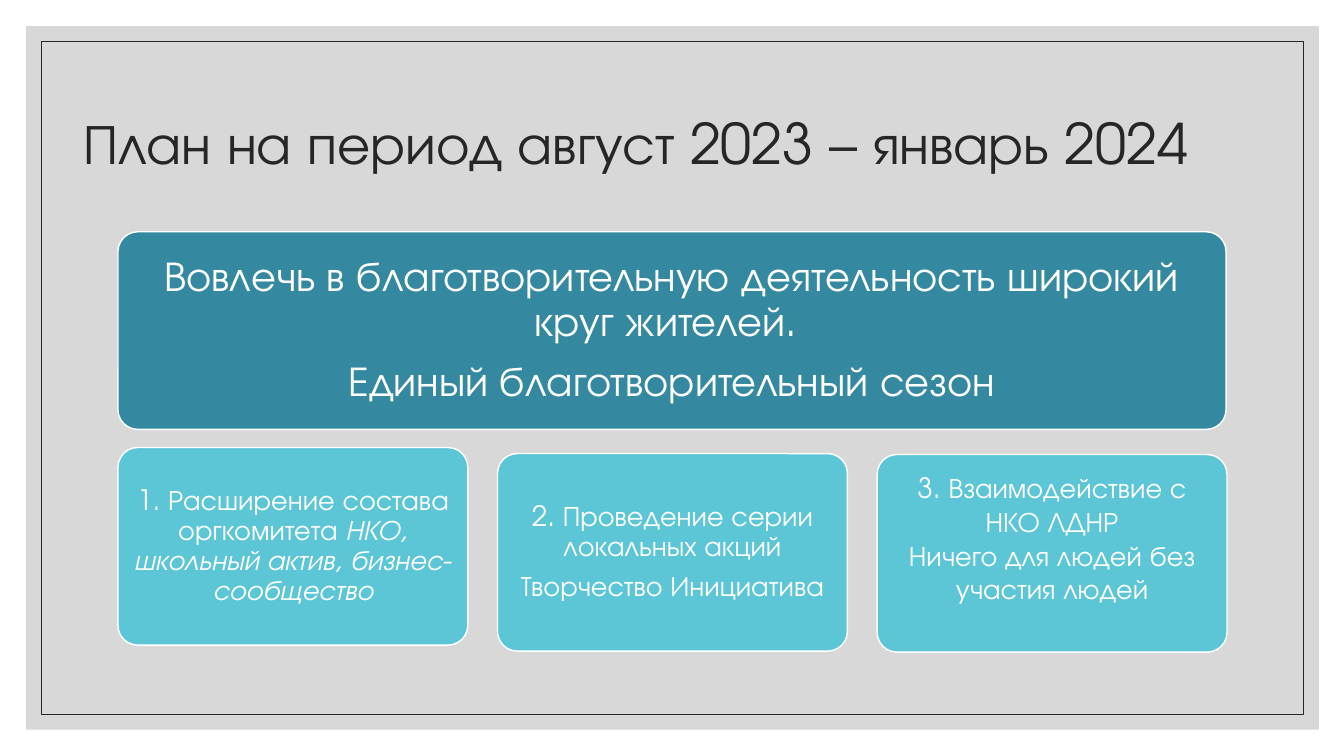
from dataclasses import dataclass

from lxml import etree
from pptx import Presentation
from pptx.dml.color import RGBColor
from pptx.enum.shapes import MSO_SHAPE
from pptx.enum.text import MSO_ANCHOR, PP_ALIGN
from pptx.oxml.ns import qn
from pptx.shapes.autoshape import Shape
from pptx.slide import Slide
from pptx.util import Inches, Pt

RECTANGLE = MSO_SHAPE.RECTANGLE
ROUNDED = MSO_SHAPE.ROUNDED_RECTANGLE
MIDDLE = MSO_ANCHOR.MIDDLE
LEFT, CENTER = PP_ALIGN.LEFT, PP_ALIGN.CENTER

FONT = "TeX Gyre Adventor"
COLORS = {
    "panel": "BFBFBF",
    "ink": "262626",
    "goal": "3488A0",
    "task": "5CC6D6",
    "white": "FFFFFF",
}
CARD_LEFT, CARD_HEIGHT = 1.17, 1.96
TASK_WIDTH, TASK_STEP = 3.47, 3.765


@dataclass
class Run:
    text: str
    italic: bool = False


@dataclass
class Card:
    left: float
    top: float
    width: float
    color: str
    size: float
    paragraphs: list[list[Run]]
    inset: float = 0.08
    bottom_inset: float = 0.08
    line_spacing: float = 0.9
    space_after: float = 7


def task(column: int, top: float, paragraphs: list[list[Run]], **options: float) -> Card:
    return Card(CARD_LEFT + column * TASK_STEP, top, TASK_WIDTH, "task", 20, paragraphs, **options)


CARDS = [
    Card(CARD_LEFT, 2.3, 10.99, "goal", 30, [
        [Run("Вовлечь в благотворительную деятельность широкий круг жителей. ")],
        [Run("Единый благотворительный сезон")],
    ], inset=0.12, bottom_inset=0.12, space_after=10.5),
    task(0, 4.44, [[
        Run("1. Расширение состава оргкомитета "),
        Run("НКО, школьный актив, бизнес-сообщество", italic=True),
    ]]),
    task(1, 4.5, [
        [Run("2. Проведение серии локальных акций")],
        [Run("Творчество Инициатива")],
    ]),
    task(2, 4.51, [
        [Run("3. Взаимодействие с НКО ЛДНР")],
        [Run("Ничего для людей без участия людей")],
    ], bottom_inset=0.38, line_spacing=1.0, space_after=0),
]


def color(name: str) -> RGBColor:
    return RGBColor.from_string(COLORS[name])


def add_box(slide: Slide, kind: MSO_SHAPE, left: float, top: float, width: float, height: float,
            fill: str | None = None, line: str | None = None, line_width: float = 1) -> Shape:
    shape = slide.shapes.add_shape(kind, Inches(left), Inches(top), Inches(width), Inches(height))
    shape.shadow.inherit = False
    if fill:
        shape.fill.solid()
        shape.fill.fore_color.rgb = color(fill)
    else:
        shape.fill.background()
    if line:
        shape.line.color.rgb = color(line)
        shape.line.width = Pt(line_width)
    else:
        shape.line.fill.background()
    return shape


def set_opacity(shape: Shape, percent: int) -> None:
    solid_color = shape.fill._xPr.find(qn("a:solidFill"))[0]
    etree.SubElement(solid_color, qn("a:alpha")).set("val", str(percent * 1000))


def write_text(shape: Shape, paragraphs: list[list[Run]], *, size: float, ink: str,
               alignment: PP_ALIGN = CENTER, line_spacing: float = 0.9,
               space_after: float = 0) -> None:
    frame = shape.text_frame
    frame.word_wrap = True
    frame.vertical_anchor = MIDDLE
    for index, runs in enumerate(paragraphs):
        paragraph = frame.add_paragraph() if index else frame.paragraphs[0]
        paragraph.alignment = alignment
        paragraph.line_spacing = line_spacing
        paragraph.space_after = Pt(space_after)
        for item in runs:
            run = paragraph.add_run()
            run.text = item.text
            run.font.name = FONT
            run.font.size = Pt(size)
            run.font.italic = item.italic
            run.font.color.rgb = color(ink)


def add_card(slide: Slide, card: Card) -> None:
    shape = add_box(slide, ROUNDED, card.left, card.top, card.width, CARD_HEIGHT,
                    fill=card.color, line="white")
    shape.adjustments[0] = 0.1
    frame = shape.text_frame
    frame.margin_left = frame.margin_right = frame.margin_top = Inches(card.inset)
    frame.margin_bottom = Inches(card.bottom_inset)
    write_text(shape, card.paragraphs, size=card.size, ink="white",
               line_spacing=card.line_spacing, space_after=card.space_after)


def main() -> None:
    presentation = Presentation()
    presentation.slide_width = Inches(13.33)
    presentation.slide_height = Inches(7.5)
    slide = presentation.slides.add_slide(presentation.slide_layouts[6])

    panel = add_box(slide, RECTANGLE, 0.26, 0.26, 12.82, 6.98, fill="panel")
    set_opacity(panel, 60)
    add_box(slide, RECTANGLE, 0.41, 0.41, 12.52, 6.68, line="ink", line_width=0.5)

    title = slide.shapes.add_textbox(Inches(0.73), Inches(0.7), Inches(11.96), Inches(1.5))
    write_text(title, [[Run("План на период август 2023 – январь 2024")]],
               size=40, ink="ink", alignment=LEFT)

    for card in CARDS:
        add_card(slide, card)
    presentation.save("out.pptx")


if __name__ == "__main__":
    main()
